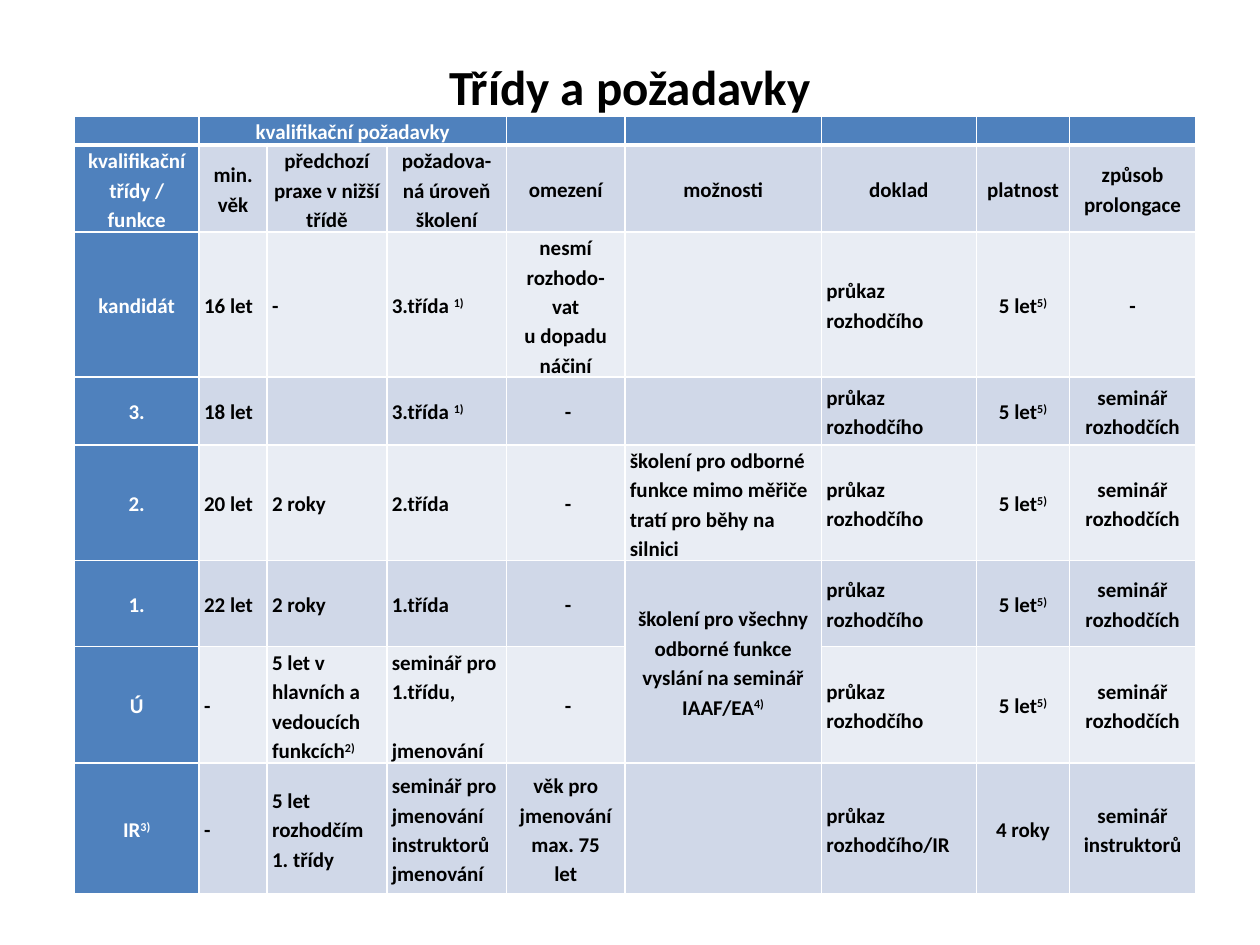
from lxml import etree
from pptx import Presentation
from pptx.dml.color import RGBColor
from pptx.enum.text import MSO_ANCHOR, PP_ALIGN
from pptx.oxml.ns import qn
from pptx.util import Inches, Pt

LEFT, CENTER = PP_ALIGN.LEFT, PP_ALIGN.CENTER
MIDDLE, BOTTOM = MSO_ANCHOR.MIDDLE, MSO_ANCHOR.BOTTOM
COLORS = {"head": "4F81BD", "dark": "D0D8E8", "light": "E9EDF4",
          "white": "FFFFFF", "black": "000000"}
FONT = "Calibri"

COL_WIDTHS = [0.99, 0.54, 0.95, 0.95, 0.94, 1.56, 1.23, 0.74, 1]
ROW_HEIGHTS = [0.21, 0.62, 1.04, 0.54, 0.83, 0.68, 0.83, 1.04]
LEFT_COLS = {1, 2, 3, 6}
CARD, VALID, SEMINAR = "průkaz rozhodčího", "5 let^5)", "seminář rozhodčích"
# "^" starts a superscript, "\n" a new paragraph
ROWS = [
    ["", "kvalifikační požadavky", "", "", "", "", "", "", ""],
    ["kvalifikační třídy / funkce", "min. věk", "předchozí praxe v nižší třídě",
     "požadova-ná úroveň školení", "omezení", "možnosti", "doklad", "platnost",
     "způsob prolongace"],
    ["kandidát", "16 let", "-", "3.třída ^1)",
     "nesmí rozhodo-\nvat\nu dopadu náčiní", "", CARD, VALID, "-"],
    ["3.", "18 let", "", "3.třída ^1)", " -", "", CARD, VALID, SEMINAR],
    ["2.", "20 let", "2 roky", "2.třída", " -",
     "školení pro odborné funkce mimo měřiče tratí pro běhy na silnici",
     CARD, VALID, SEMINAR],
    ["1.", "22 let", "2 roky", "1.třída", " -",
     "školení pro všechny odborné funkce vyslání na seminář IAAF/EA^4)",
     CARD, VALID, SEMINAR],
    ["Ú", "-", "5 let v hlavních a vedoucích funkcích^2)",
     "seminář pro 1.třídu,\njmenování", " -", "", CARD, VALID, SEMINAR],
    ["IR^3)", "-", "5 let rozhodčím\n1. třídy",
     "seminář pro jmenování instruktorů jmenování",
     "věk pro jmenování\nmax. 75\nlet", "", "průkaz rozhodčího/IR", "4 roky",
     "seminář instruktorů"],
]


def rgb(name):
    return RGBColor.from_string(COLORS[name])


def set_font(p, size, color):
    p.font.name, p.font.size, p.font.bold = FONT, Pt(size), True
    p.font.color.rgb = rgb(color)


def add_title(s, left, top, width, height):
    tf = s.shapes.add_textbox(left, top, width, height).text_frame
    tf.word_wrap = True
    tf.vertical_anchor = MIDDLE
    p = tf.paragraphs[0]
    p.text = "Třídy a požadavky"
    p.alignment = CENTER
    set_font(p, 28, "black")


def set_borders(cell, top, bottom):
    tcPr = cell._tc.get_or_add_tcPr()
    for side, width in (("L", 1), ("R", 1), ("T", top), ("B", bottom)):
        ln = etree.SubElement(tcPr, qn(f"a:ln{side}"), w=str(Pt(width)))
        fill = etree.SubElement(ln, qn("a:solidFill"))
        etree.SubElement(fill, qn("a:srgbClr"), val=COLORS["white"])


def write_cell(cell, text, align, color):
    cell.margin_left = cell.margin_right = Inches(0.04)
    cell.margin_top = cell.margin_bottom = 0
    tf = cell.text_frame
    for i, line in enumerate(text.split("\n")):
        p = tf.add_paragraph() if i else tf.paragraphs[0]
        p.alignment, p.line_spacing = align, 1.15
        set_font(p, 12, color)
        main, _, note = line.partition("^")
        if main:
            p.add_run().text = main
        else:
            etree.SubElement(p._p, qn("a:endParaRPr"), sz="1200")
        if note:
            r = p.add_run()
            r.text = note
            r._r.get_or_add_rPr().set("baseline", "30000")


def add_class_table(s, left, top, width, height):
    table = s.shapes.add_table(len(ROWS), len(COL_WIDTHS), left, top,
                               width, height).table
    for column, w in zip(table.columns, COL_WIDTHS):
        column.width = Inches(w)
    for row, h in zip(table.rows, ROW_HEIGHTS):
        row.height = Inches(h)
    for i, texts in enumerate(ROWS):
        for j, text in enumerate(texts):
            cell = table.cell(i, j)
            head = i == 0 or j == 0
            left_side = (i > 1 and j in LEFT_COLS) or (i, j) == (4, 5)
            set_borders(cell, 3 if i == 1 else 1, 3 if i == 0 else 1)
            cell.fill.solid()
            cell.fill.fore_color.rgb = rgb(
                "head" if head else "dark" if i % 2 else "light")
            cell.vertical_anchor = MIDDLE if i else BOTTOM
            write_cell(cell, text, LEFT if left_side else CENTER,
                       "white" if head else "black")
    table.cell(6, 3).text_frame.paragraphs[1].space_before = Pt(17)
    table.cell(0, 1).merge(table.cell(0, 3))
    table.cell(5, 5).merge(table.cell(6, 5))


prs = Presentation()
prs.slide_width, prs.slide_height = Inches(10), Inches(7.5)
s = prs.slides.add_slide(prs.slide_layouts[6])
add_title(s, Inches(0.5), Inches(0.3), Inches(9), Inches(0.77))
add_class_table(s, Inches(0.59), Inches(0.92), Inches(8.9), Inches(6.17))
prs.save("out.pptx")
